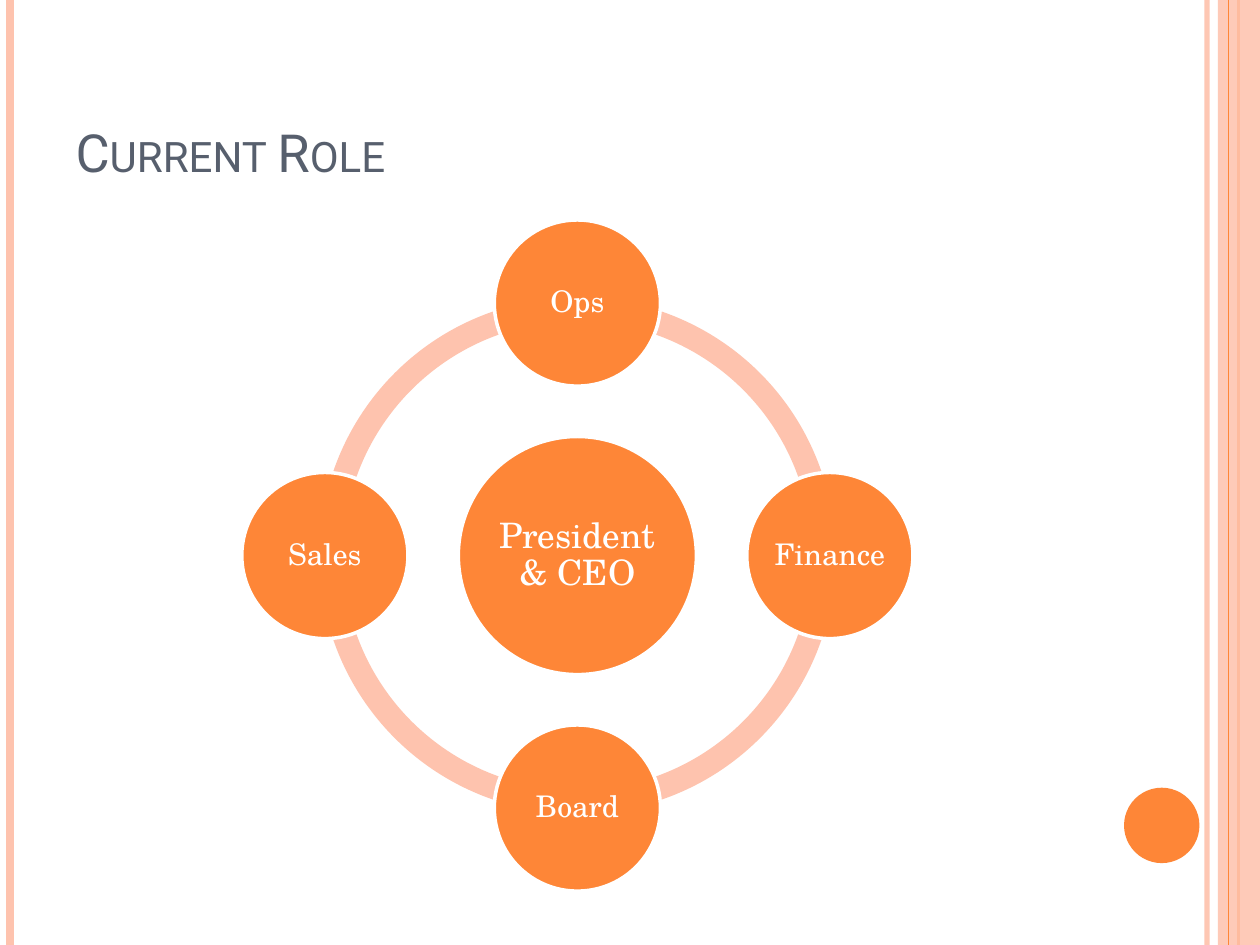
import pptx
import pptx.dml.color
import pptx.enum.shapes
import pptx.enum.text
import pptx.oxml
import pptx.oxml.ns
import pptx.util
from pptx.util import Cm

COLORS = {"orange": "FE8637", "peach": "FEC3AE", "slate": "575F6D", "white": "FFFFFF"}
FONTS = {"title": "Roboto", "body": "TeX Gyre Schola"}
SHAPES = pptx.enum.shapes.MSO_SHAPE
ANCHOR = pptx.enum.text.MSO_ANCHOR
ALIGN = pptx.enum.text.PP_ALIGN

PAGE_W, PAGE_H = 25.4, 19.05
CENTER_X, CENTER_Y = 11.64, 11.2
ORBIT = 5.09        # hub centre to role centres
RING_SIZE = 10.41
HUB_SIZE, ROLE_SIZE = 4.8, 3.35
ROLES = [("Ops", 0, -1), ("Finance", 1, 0), ("Board", 0, 1), ("Sales", -1, 0)]


def rgb(name):
    return pptx.dml.color.RGBColor.from_string(COLORS[name])


def set_attrs(obj, **values):
    for name, value in values.items():
        setattr(obj, name, value)


def set_alpha(fill_parent, percent):
    clr = fill_parent.find(".//" + pptx.oxml.ns.qn("a:srgbClr"))
    alpha = pptx.oxml.parse_xml(
        f'<a:alpha {pptx.oxml.ns.nsdecls("a")} val="{percent * 1000}"/>')
    clr.append(alpha)


def format_run(r, font, size, color):
    set_attrs(r.font, name=FONTS[font], size=pptx.util.Pt(size))
    r.font.color.rgb = rgb(color)


def add_rule(slide, x, color, width, alpha=None):
    """Full-height vertical line."""
    sp = slide.shapes.add_connector(
        pptx.enum.shapes.MSO_CONNECTOR.STRAIGHT, Cm(x), 0, Cm(x), Cm(PAGE_H))
    sp.line.color.rgb = rgb(color)
    sp.line.width = pptx.util.Pt(width)
    spPr = sp._element.spPr
    if alpha:
        set_alpha(spPr, alpha)
    spPr.append(pptx.oxml.parse_xml(f'<a:effectLst {pptx.oxml.ns.nsdecls("a")}/>'))


def add_filled(slide, kind, x, y, w, h, color):
    """Flat shape without outline."""
    sp = slide.shapes.add_shape(kind, Cm(x), Cm(y), Cm(w), Cm(h))
    sp.shadow.inherit = False
    sp.fill.solid()
    sp.fill.fore_color.rgb = rgb(color)
    sp.line.fill.background()
    return sp


def add_centered(slide, kind, cx, cy, size, color):
    return add_filled(slide, kind, cx - size / 2, cy - size / 2, size, size, color)


def add_node(slide, text, cx, cy, size, font_size):
    """Labelled circle with a white outline."""
    sp = add_centered(slide, SHAPES.OVAL, cx, cy, size, "orange")
    sp.line.color.rgb = rgb("white")
    sp.line.width = pptx.util.Pt(2)
    tf = sp.text_frame
    margin = Cm(0.05)
    set_attrs(tf, word_wrap=True, vertical_anchor=ANCHOR.MIDDLE, margin_left=margin,
              margin_right=margin, margin_top=margin, margin_bottom=margin)
    p = tf.paragraphs[0]
    set_attrs(p, alignment=ALIGN.CENTER, line_spacing=0.9)
    r = p.add_run()
    r.text = text
    format_run(r, "body", font_size, "white")


def add_ring(slide):
    """Four quarter arcs; an adjustment of 0.6 equals one degree."""
    for start in (180, 90, 0, 270):
        sp = add_centered(slide, SHAPES.BLOCK_ARC, CENTER_X, CENTER_Y, RING_SIZE, "peach")
        for i, value in enumerate((start * 0.6, (start + 90) % 360 * 0.6, 0.046)):
            sp.adjustments[i] = value


def add_decor(slide):
    add_rule(slide, 24.33, "peach", 3, alpha=93)
    add_rule(slide, 0.21, "peach", 4.5)
    add_rule(slide, 24.97, "orange", 1.5)
    band = add_filled(slide, SHAPES.RECTANGLE, 24.55, 0, PAGE_W - 24.55, PAGE_H, "peach")
    set_alpha(band._element.spPr, 87)
    add_rule(slide, 24.76, "orange", 0.75)
    add_centered(slide, SHAPES.OVAL, 23.42, 16.64, 1.52, "orange")


def set_title(slide, text):
    sp = slide.shapes.title
    set_attrs(sp, left=Cm(1.27), top=Cm(0.43), width=Cm(22.86), height=Cm(3.38))
    tf = sp.text_frame
    set_attrs(tf, word_wrap=True, vertical_anchor=ANCHOR.BOTTOM,
              auto_size=pptx.enum.text.MSO_AUTO_SIZE.NONE)
    p = tf.paragraphs[0]
    p.alignment = ALIGN.LEFT
    r = p.add_run()
    r.text = text
    format_run(r, "title", 30, "slate")
    r.font._element.set("cap", "small")


def main():
    prs = pptx.Presentation()
    set_attrs(prs, slide_width=Cm(PAGE_W), slide_height=Cm(PAGE_H))
    slide = prs.slides.add_slide(prs.slide_layouts[5])

    # Frame and title
    add_decor(slide)
    set_title(slide, "Current Role")

    # Hub with the roles around it
    add_ring(slide)
    add_node(slide, "President & CEO", CENTER_X, CENTER_Y, HUB_SIZE, 20)
    for text, dx, dy in ROLES:
        add_node(slide, text, CENTER_X + dx * ORBIT, CENTER_Y + dy * ORBIT, ROLE_SIZE, 17)

    prs.save("out.pptx")


if __name__ == "__main__":
    main()
